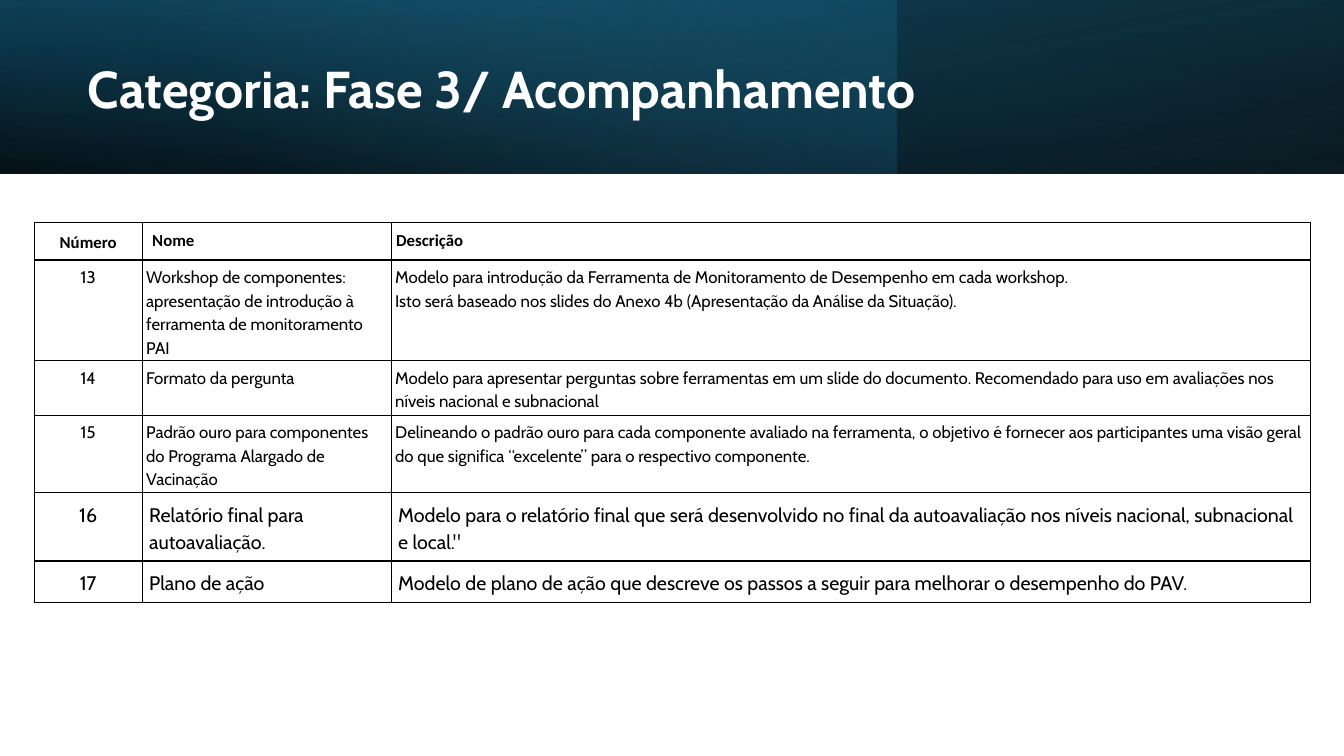
"""Build the slide that lists the tools of phase 3, follow-up."""
from dataclasses import dataclass

from lxml import etree
from pptx import Presentation
from pptx import util as u
from pptx.dml.color import RGBColor
from pptx.enum import shapes, text
from pptx.oxml.ns import qn

WIDTH, HEIGHT = u.Inches(13.33), u.Inches(7.5)
BLACK, WHITE = "000000", "FFFFFF"
COLUMNS = (8.03, 18.53, 68.42)


@dataclass(frozen=True)
class Stop:
    position: int
    color: str
    opacity: int


@dataclass(frozen=True)
class Band:
    width: float
    angle: int
    stops: tuple[Stop, ...]
    rotation: int = 0
    flipped: bool = False


@dataclass(frozen=True)
class Row:
    height: float
    cells: tuple[str, str, str]
    size: int = 12
    font: str = "Cabin"
    bold: bool = False
    insets: tuple[tuple[float, float], ...] = ((0.04, 0.04),) * 3


WIDE_INSETS = ((0.07, 0.07),) * 3

BANDS = (
    Band(100, 100, (Stop(0, BLACK, 96), Stop(100, "104862", 100)), 180, True),
    Band(66.69, 140, (Stop(0, "156082", 41), Stop(74, "46B1E1", 0))),
    Band(100, 260, (Stop(0, BLACK, 63), Stop(78, "156082", 15)), 0, True),
)

ROWS = (
    Row(4.93, ("Número", "Nome", "Descrição"), font="Calibri", bold=True,
        insets=((0.07, 0.07), (0.1, 0.05), (0.05, 0.05))),
    Row(13.33, (
        "13",
        "Workshop de componentes: apresentação de introdução à ferramenta de monitoramento PAI",
        "Modelo para introdução da Ferramenta de Monitoramento de Desempenho em cada workshop.\n"
        "Isto será baseado nos slides do Anexo 4b (Apresentação da Análise da Situação).")),
    Row(7.07, (
        "14",
        "Formato da pergunta",
        "Modelo para apresentar perguntas sobre ferramentas em um slide do documento. "
        "Recomendado para uso em avaliações nos níveis nacional e subnacional")),
    Row(10.27, (
        "15",
        "Padrão ouro para componentes do Programa Alargado de Vacinação",
        "Delineando o padrão ouro para cada componente avaliado na ferramenta, o objetivo é "
        "fornecer aos participantes uma visão geral do que significa “excelente” para o "
        "respectivo componente.")),
    Row(8.93, (
        "16",
        "Relatório final para autoavaliação.",
        "Modelo para o relatório final que será desenvolvido no final da autoavaliação nos "
        "níveis nacional, subnacional e local.\""), size=14, insets=WIDE_INSETS),
    Row(5.47, (
        "17",
        "Plano de ação",
        "Modelo de plano de ação que descreve os passos a seguir para melhorar o desempenho "
        "do PAV."), size=14, insets=WIDE_INSETS),
)


def across(percent: float) -> int:
    return round(WIDTH * percent / 100)


def down(percent: float) -> int:
    return round(HEIGHT * percent / 100)


def rgb(color: str) -> RGBColor:
    return RGBColor.from_string(color)


def add_run(paragraph, words: str, size: int, font: str, color: str, bold: bool) -> None:
    run = paragraph.add_run()
    run.text = words
    run.font.size = u.Pt(size)
    run.font.name = font
    run.font.bold = bold
    run.font.color.rgb = rgb(color)


def fill_gradient(shape, band: Band) -> None:
    shape.fill.background()
    properties = shape.element.spPr
    gradient = etree.Element(qn("a:gradFill"), rotWithShape="1")
    stop_list = etree.SubElement(gradient, qn("a:gsLst"))
    for stop in band.stops:
        point = etree.SubElement(stop_list, qn("a:gs"), pos=str(stop.position * 1000))
        color = etree.SubElement(point, qn("a:srgbClr"), val=stop.color)
        etree.SubElement(color, qn("a:alpha"), val=str(stop.opacity * 1000))
    etree.SubElement(gradient, qn("a:lin"), ang=str(band.angle * 60000), scaled="0")
    properties.replace(properties.find(qn("a:noFill")), gradient)


def add_band(slide, band: Band) -> None:
    shape = slide.shapes.add_shape(
        shapes.MSO_SHAPE.RECTANGLE, 0, 0, across(band.width), down(22.93))
    shape.shadow.inherit = False
    shape.line.fill.background()
    fill_gradient(shape, band)
    shape.rotation = band.rotation
    if band.flipped:
        shape.element.spPr.find(qn("a:xfrm")).set("flipH", "1")


def add_title(slide, words: str) -> None:
    box = slide.shapes.add_textbox(across(5.78), down(3.6), across(79.44), down(16.93))
    frame = box.text_frame
    frame.word_wrap = True
    frame.vertical_anchor = text.MSO_ANCHOR.MIDDLE
    paragraph = frame.paragraphs[0]
    paragraph.line_spacing = 0.9
    add_run(paragraph, words, 37, "Cabin", WHITE, True)


def add_borders(cell) -> None:
    properties = cell._tc.get_or_add_tcPr()
    for side in ("lnL", "lnR", "lnT", "lnB"):
        line = etree.SubElement(properties, qn(f"a:{side}"), w=str(u.Pt(1)))
        fill = etree.SubElement(line, qn("a:solidFill"))
        etree.SubElement(fill, qn("a:srgbClr"), val=BLACK)


def fill_cell(cell, row: Row, column: int) -> None:
    add_borders(cell)
    cell.fill.solid()
    cell.fill.fore_color.rgb = rgb(WHITE)
    side, top = row.insets[column]
    cell.margin_left = cell.margin_right = u.Inches(side)
    cell.margin_top = cell.margin_bottom = u.Inches(top)
    frame = cell.text_frame
    for index, words in enumerate(row.cells[column].split("\n")):
        paragraph = frame.add_paragraph() if index else frame.paragraphs[0]
        paragraph.line_spacing = 1.15
        paragraph.alignment = text.PP_ALIGN.LEFT if column else text.PP_ALIGN.CENTER
        add_run(paragraph, words, row.size, row.font, BLACK, row.bold)


def add_tools_table(slide) -> None:
    table = slide.shapes.add_table(
        len(ROWS), len(COLUMNS), across(2.55), down(29.47),
        across(sum(COLUMNS)), down(sum(row.height for row in ROWS))).table
    table.first_row = table.horz_banding = False
    for column, width in enumerate(COLUMNS):
        table.columns[column].width = across(width)
    for index, row in enumerate(ROWS):
        table.rows[index].height = down(row.height)
        for column in range(len(COLUMNS)):
            fill_cell(table.cell(index, column), row, column)


def main() -> None:
    presentation = Presentation()
    presentation.slide_width, presentation.slide_height = WIDTH, HEIGHT
    slide = presentation.slides.add_slide(presentation.slide_layouts[6])
    for band in BANDS:
        add_band(slide, band)
    add_title(slide, "Categoria: Fase 3/ Acompanhamento")
    add_tools_table(slide)
    presentation.save("out.pptx")


if __name__ == "__main__":
    main()
